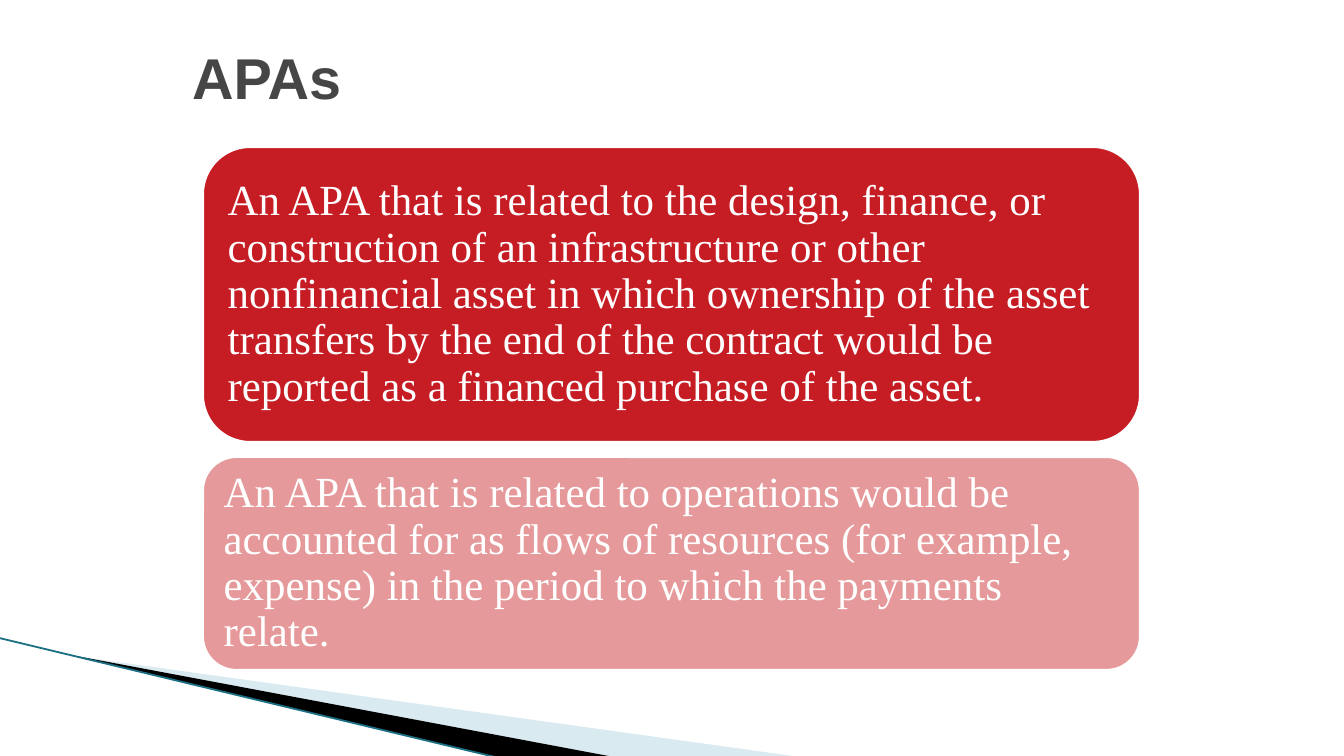
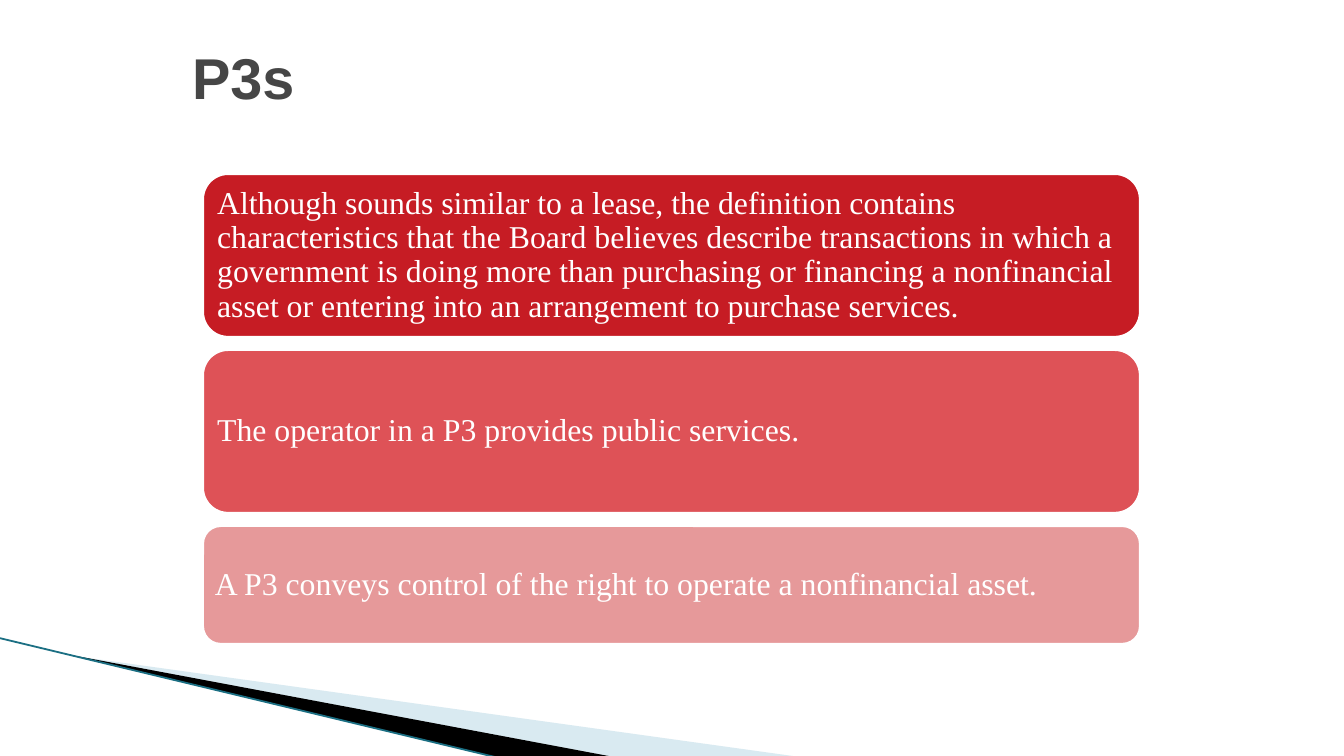
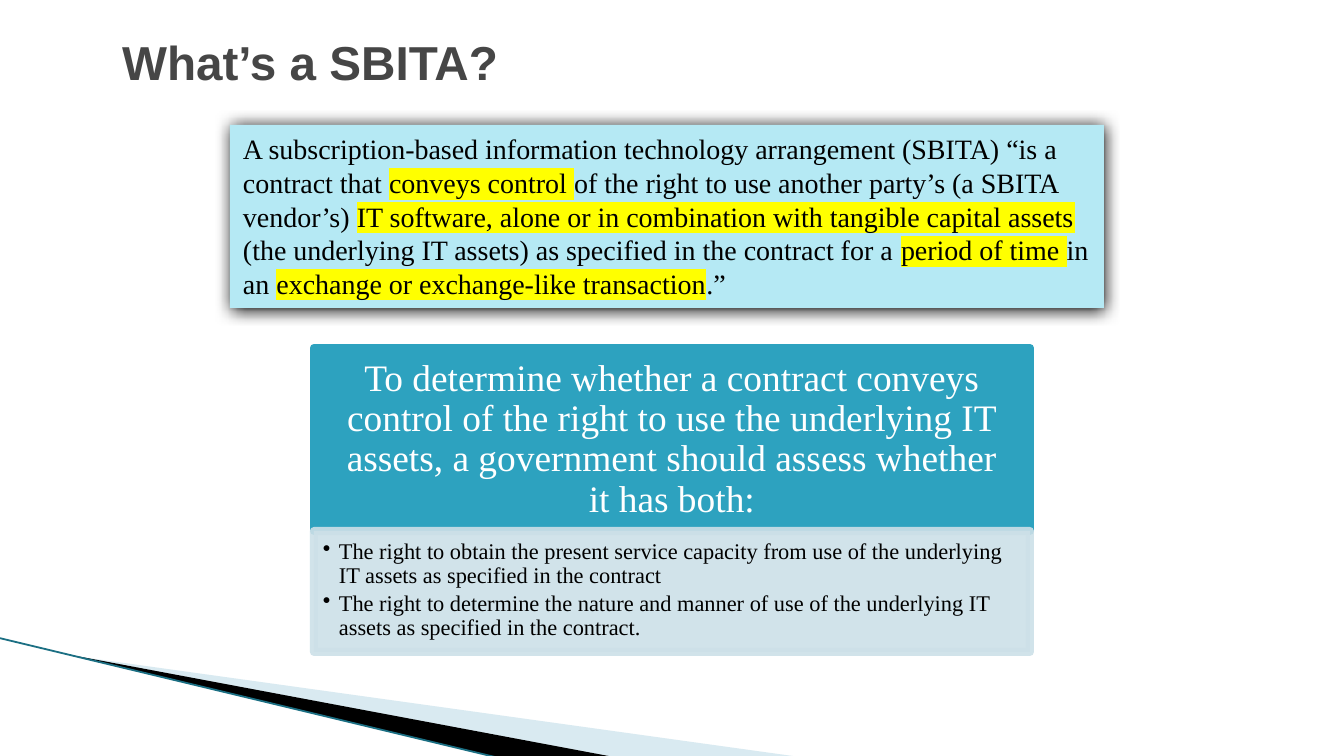
from lxml import etree
from pptx import Presentation
from pptx import util as u
from pptx.dml.color import RGBColor
from pptx.enum import shapes, text
from pptx.oxml.ns import qn

EMU_PER_PX = 914400 / 134.4
HEADING_FONT, BODY_FONT = "Arial", "Times New Roman"
WHITE, BLACK, GREY, YELLOW = "FFFFFF", "000000", "464646", "FFFF00"
RED, CORAL, PINK = "C61C24", "DE5257", "E6999A"
TEAL, PALE_TEAL, AQUA = "2DA2BF", "CDE0E8", "B5E9F4"
WEDGE_BLUE, EDGE_BLUE = "A0CBDC", "1B6F83"
OUTLINE = 4.33

WEDGES = [
    ([(74, 656), (800, 757), (613, 757)], WEDGE_BLUE, 40),
    ([(71, 655), (614, 757), (500, 758), (73, 656)], BLACK, 100),
]
EDGE = (-1, 638, 499, 758)

CARD_SLIDES = [
    {
        "title": "APAs", "top": 144, "gap": 9, "size": 23, "inset": 13,
        "cards": [
            ("An APA that is related to the design, finance, or construction of an infrastructure or other "
             "nonfinancial asset in which ownership of the asset transfers by the end of the contract would "
             "be reported as a financed purchase of the asset.", 301, RED),
            ("An APA that is related to operations would be accounted for as flows of resources (for example, "
             "expense) in the period to which the payments relate.", 219, PINK),
        ],
    },
    {
        "title": "P3s", "top": 171, "gap": 7, "size": 17, "inset": 9,
        "cards": [
            ("Although sounds similar to a lease, the definition contains characteristics that the Board "
             "believes describe transactions in which a government is doing more than purchasing or financing "
             "a nonfinancial asset or entering into an arrangement to purchase services.", 169, RED),
            ("The operator in a P3 provides public services.", 169, CORAL),
            ("A P3 conveys control of the right to operate a nonfinancial asset.", 124, PINK),
        ],
    },
]
CARD_LEFT, CARD_WIDTH = 200, 943
CARD_TITLE_BOX = (179, 27, 957, 99)

SBITA_TITLE = "What’s a SBITA?"
SBITA_TITLE_BOX = (109, 12, 1046, 99)
DEFINITION = [
    ("A subscription-based information technology arrangement (SBITA) “is a contract that ", False),
    ("conveys control ", True),
    ("of the right to use another party’s (a SBITA vendor’s) ", False),
    ("IT software, alone or in combination with tangible capital assets ", True),
    ("(the underlying IT assets) as specified in the contract for a ", False),
    ("period of time ", True),
    ("in an ", False),
    ("exchange or exchange-like transaction", True),
    (".”", False),
]
TEST_HEADING = ("To determine whether a contract conveys control of the right to use the underlying IT assets, "
                "a government should assess whether it has both:")
TEST_RIGHTS = [
    "The right to obtain the present service capacity from use of the underlying IT assets as specified "
    "in the contract",
    "The right to determine the nature and manner of use of the underlying IT assets as specified in the contract.",
]
DEFINITION_BOX = (230, 125, 874, 183)
TEST_LEFT, TEST_TOP, TEST_WIDTH = 314, 348, 716
HEADING_HEIGHT, RIGHTS_HEIGHT = 183, 121


def px(length):
    return u.Emu(round(length * EMU_PER_PX))


def color(value):
    return RGBColor.from_string(value)


def paint(fill, value, opacity=100):
    fill.solid()
    fill.fore_color.rgb = color(value)
    if opacity < 100:
        for node in fill._xPr.iter(qn("a:srgbClr")):
            if node.getparent().getparent() is fill._xPr:
                etree.SubElement(node, qn("a:alpha"), val=str(opacity * 1000))


def set_font(run, name, size, value, bold=False):
    run.font.name = name
    run.font.size = u.Pt(size)
    run.font.bold = bold
    run.font.color.rgb = color(value)


def set_frame(frame, anchor, insets):
    frame.word_wrap = True
    frame.auto_size = text.MSO_AUTO_SIZE.NONE
    frame.vertical_anchor = anchor
    frame.margin_left, frame.margin_top, frame.margin_right, frame.margin_bottom = map(px, insets)


def add_panel(slide, box, fill, outline=None, opacity=100, kind=shapes.MSO_SHAPE.RECTANGLE):
    shape = slide.shapes.add_shape(kind, *map(px, box))
    shape.shadow.inherit = False
    paint(shape.fill, fill, opacity)
    if outline:
        paint(shape.line.fill, outline, opacity)
        shape.line.width = u.Pt(OUTLINE)
    else:
        shape.line.fill.background()
    return shape


def write(shape, lines, size, value, insets, align=text.PP_ALIGN.LEFT,
          anchor=text.MSO_ANCHOR.MIDDLE):
    frame = shape.text_frame
    set_frame(frame, anchor, insets)
    frame.text = "\n".join(lines)
    for paragraph in frame.paragraphs:
        paragraph.alignment = align
        paragraph.line_spacing = 0.9
        set_font(paragraph.runs[0], BODY_FONT, size, value)


def add_bands(slide, layout):
    bands = []
    for points, fill, opacity in WEDGES:
        builder = slide.shapes.build_freeform(*points[0], scale=EMU_PER_PX)
        builder.add_line_segments(points[1:], close=True)
        wedge = builder.convert_to_shape()
        wedge.shadow.inherit = False
        paint(wedge.fill, fill, opacity)
        wedge.line.fill.background()
        bands.append(wedge)
    edge = slide.shapes.add_connector(shapes.MSO_CONNECTOR.STRAIGHT, *map(px, EDGE))
    edge.line.color.rgb = color(EDGE_BLUE)
    edge.line.width = u.Pt(0.95)
    etree.SubElement(edge.element.spPr, qn("a:effectLst"))
    bands.append(edge)
    for position, band in enumerate(bands, start=2):
        layout.element.cSld.spTree.insert(position, band.element)


def add_slide(presentation, layout, title, box, size):
    slide = presentation.slides.add_slide(layout)
    shape = slide.shapes.title
    shape.left, shape.top, shape.width, shape.height = map(px, box)
    frame = shape.text_frame
    frame.text = title
    set_frame(frame, text.MSO_ANCHOR.MIDDLE, (13, 0, 0, 0))
    frame.paragraphs[0].alignment = text.PP_ALIGN.LEFT
    set_font(frame.paragraphs[0].runs[0], HEADING_FONT, size, GREY, bold=True)
    return slide


def add_cards(slide, content):
    top = content["top"]
    for wording, height, fill in content["cards"]:
        card = add_panel(slide, (CARD_LEFT, top, CARD_WIDTH, height), fill, WHITE,
                         kind=shapes.MSO_SHAPE.ROUNDED_RECTANGLE)
        write(card, [wording], content["size"], WHITE, [content["inset"]] * 4)
        top += height + content["gap"]


def add_definition(slide):
    shape = add_panel(slide, DEFINITION_BOX, AQUA)
    effects = shape.element.spPr.find(qn("a:effectLst"))
    shadow = etree.SubElement(effects, qn("a:outerShdw"), blurRad=str(u.Pt(8.5)), dist=str(u.Pt(1)),
                              dir="5400000", algn="ctr", rotWithShape="0")
    etree.SubElement(shadow, qn("a:srgbClr"), val=BLACK)
    set_frame(shape.text_frame, text.MSO_ANCHOR.TOP, (13, 7, 13, 7))
    paragraph = shape.text_frame.paragraphs[0]
    paragraph.alignment = text.PP_ALIGN.LEFT
    for wording, marked in DEFINITION:
        run = paragraph.add_run()
        run.text = wording
        set_font(run, BODY_FONT, 15, BLACK)
        if marked:
            highlight = etree.Element(qn("a:highlight"))
            etree.SubElement(highlight, qn("a:srgbClr"), val=YELLOW)
            run.font._element.find(qn("a:solidFill")).addnext(highlight)


def add_test(slide):
    heading = add_panel(slide, (TEST_LEFT, TEST_TOP, TEST_WIDTH, HEADING_HEIGHT), TEAL, TEAL)
    write(heading, [TEST_HEADING], 20, WHITE, (21, 12, 21, 12), text.PP_ALIGN.CENTER)
    rights = add_panel(slide, (TEST_LEFT, TEST_TOP + HEADING_HEIGHT, TEST_WIDTH, RIGHTS_HEIGHT),
                       PALE_TEAL, PALE_TEAL, 90)
    write(rights, TEST_RIGHTS, 12, BLACK, (9, 9, 12, 13), anchor=text.MSO_ANCHOR.TOP)
    for paragraph in rights.text_frame.paragraphs:
        paragraph.space_after = u.Pt(2)
        properties = paragraph._p.get_or_add_pPr()
        properties.set("marL", str(px(16)))
        properties.set("indent", str(px(-16)))
        etree.SubElement(properties, qn("a:buChar"), char="•")


def main():
    presentation = Presentation()
    presentation.slide_width, presentation.slide_height = px(1344), px(756)
    layout = presentation.slide_layouts[5]
    for content in CARD_SLIDES:
        slide = add_slide(presentation, layout, content["title"], CARD_TITLE_BOX, 30.8)
        add_cards(slide, content)
    slide = add_slide(presentation, layout, SBITA_TITLE, SBITA_TITLE_BOX, 25.5)
    add_definition(slide)
    add_test(slide)
    add_bands(slide, layout)
    presentation.save("out.pptx")


if __name__ == "__main__":
    main()
